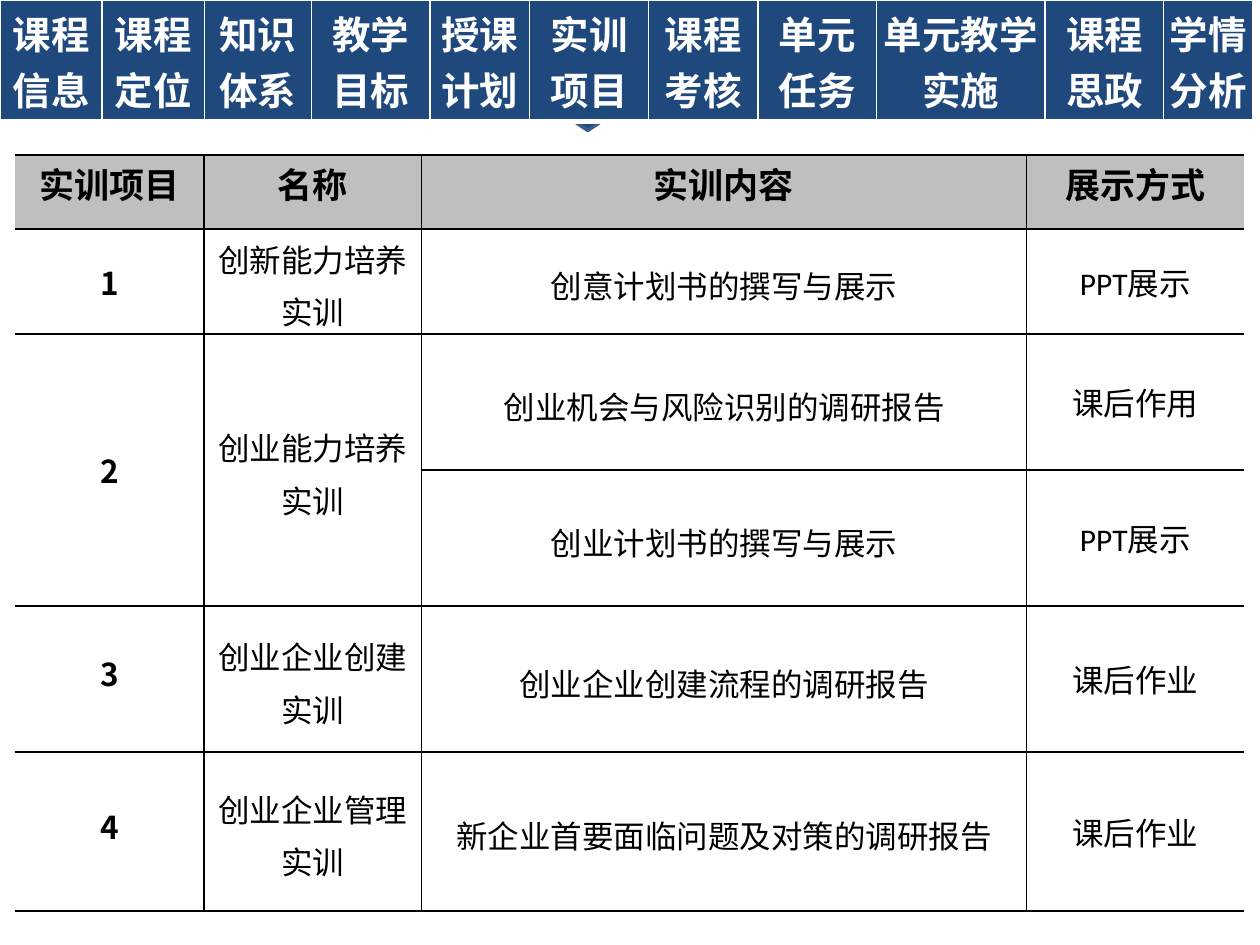
import pptx
import pptx.util
import pptx.dml.color
import pptx.enum.shapes
import pptx.enum.text
import pptx.oxml.ns
from lxml import etree
from dataclasses import dataclass

Cm, Pt = pptx.util.Cm, pptx.util.Pt


@dataclass(frozen=True)
class Theme:
    navy: str = "1F497D"
    marker_line: str = "3A5F8C"
    header_gray: str = "BFBFBF"
    black: str = "000000"
    white: str = "FFFFFF"
    nav_font: str = "Times New Roman"
    text_font: str = "Calibri"
    number_font: str = "Noto Sans CJK SC"
    nav_size: int = 22
    header_size: int = 20
    body_size: int = 18


THEME = Theme()

# Tab text (one item per paragraph) and tab width in cm
TABS = [
    (["课程", "信息"], 2.06), (["课程", "定位"], 2.06), (["知识", "体系"], 2.16),
    (["教学", "目标"], 2.39), (["授课", "计划"], 2.01), (["实训", "项目"], 2.39),
    (["课程", "考核"], 2.21), (["单元", "任务"], 2.39), (["单元教学", "实施"], 3.4),
    (["课程思政"], 2.39), (["学情分析"], 1.8),
]
HEADERS = ["实训项目", "名称", "实训内容", "展示方式"]
# Number, name paragraphs, and (content, presentation, row height in cm) per row
PROJECTS = [
    ("1", ["创新能力培养", "实训"], [("创意计划书的撰写与展示", "PPT展示", 2.08)]),
    ("2", ["创业能力培养", "实训"], [("创业机会与风险识别的调研报告", "课后作用", 2.74),
                               ("创业计划书的撰写与展示", "PPT展示", 2.74)]),
    ("3", ["创业企业创建", "实训"], [("创业企业创建流程的调研报告", "课后作业", 2.95)]),
    ("4", ["创业企业管理", "实训"], [("新企业首要面临问题及对策的调研报告", "课后作业", 3.2)]),
]
COLUMN_WIDTHS = [3.81, 4.39, 12.19, 4.39]
HEADER_HEIGHT = 1.5
TIGHT = Pt(19)
LOOSE = 1.15


def rgb(value):
    return pptx.dml.color.RGBColor.from_string(value)


def add_plain_table(slide, left, top, widths, heights):
    frame = slide.shapes.add_table(len(heights), len(widths), Cm(left), Cm(top),
                                   Cm(sum(widths)), Cm(sum(heights)))
    table = frame.table
    table.first_row = table.horz_banding = False
    for column, width in zip(table.columns, widths):
        column.width = Cm(width)
    for row, height in zip(table.rows, heights):
        row.height = Cm(height)
    return table


def set_borders(cell, color, **widths):
    """Draw the sides L, R, T and B in points; a width of 0 hides a side."""
    properties = cell._tc.get_or_add_tcPr()
    qn = pptx.oxml.ns.qn
    for side in "LRTB":
        line = etree.SubElement(properties, qn("a:ln" + side), w=str(int(Pt(widths[side]))))
        if widths[side]:
            fill = etree.SubElement(line, qn("a:solidFill"))
            etree.SubElement(fill, qn("a:srgbClr"), val=color)
        else:
            etree.SubElement(line, qn("a:noFill"))


def set_fill(cell, color):
    if color:
        cell.fill.solid()
        cell.fill.fore_color.rgb = rgb(color)
    else:
        cell.fill.background()


def write_cell(cell, lines, font, size, color, bold=False, spacing=None):
    cell.text = "\n".join(lines)
    for paragraph in cell.text_frame.paragraphs:
        paragraph.alignment = pptx.enum.text.PP_ALIGN.CENTER
        if spacing:
            paragraph.line_spacing = spacing
        paragraph.font.name = font
        paragraph.font.size = Pt(size)
        paragraph.font.bold = bold
        paragraph.font.color.rgb = rgb(color)


def add_project_table(slide):
    heights = [HEADER_HEIGHT] + [row[2] for project in PROJECTS for row in project[2]]
    table = add_plain_table(slide, 0.3, 3.12, COLUMN_WIDTHS, heights)
    last_row, last_column = len(heights) - 1, len(COLUMN_WIDTHS) - 1
    for r in range(len(heights)):
        for c in range(len(COLUMN_WIDTHS)):
            cell = table.cell(r, c)
            set_borders(cell, THEME.black,
                        L=1 if c else 0, R=1 if c < last_column else 0,
                        T=1.5 if r < 2 else 1, B=1.5 if r in (0, last_row) else 1)
            set_fill(cell, None if r else THEME.header_gray)
            cell.vertical_anchor = pptx.enum.text.MSO_ANCHOR.MIDDLE
            cell.margin_left = cell.margin_right = Cm(0.05)
            cell.margin_top = cell.margin_bottom = 0

    for c, header in enumerate(HEADERS):
        write_cell(table.cell(0, c), [header], THEME.text_font, THEME.header_size,
                   THEME.black, bold=True, spacing=TIGHT)

    body = (THEME.text_font, THEME.body_size, THEME.black)
    r = 1
    for number, name, tasks in PROJECTS:
        if len(tasks) > 1:
            for c in (0, 1):
                table.cell(r, c).merge(table.cell(r + len(tasks) - 1, c))
        write_cell(table.cell(r, 0), [number], THEME.number_font, THEME.body_size,
                   THEME.black, bold=True, spacing=TIGHT if number in "34" else None)
        write_cell(table.cell(r, 1), name, *body, spacing=LOOSE)
        for content, presentation, _ in tasks:
            write_cell(table.cell(r, 2), [content], *body, spacing=LOOSE)
            write_cell(table.cell(r, 3), [presentation], *body)
            r += 1


def add_current_tab_marker(slide):
    marker = slide.shapes.add_shape(pptx.enum.shapes.MSO_SHAPE.FLOWCHART_MERGE,
                                    Cm(11.1), Cm(2.13), Cm(1.5), Cm(0.5))
    marker.shadow.inherit = False
    marker.fill.solid()
    marker.fill.fore_color.rgb = rgb(THEME.navy)
    marker.line.color.rgb = rgb(THEME.marker_line)
    marker.line.width = Pt(2)


def add_navigation(slide):
    table = add_plain_table(slide, 0, 0, [width for _, width in TABS], [1.27])
    for c, (lines, _) in enumerate(TABS):
        cell = table.cell(0, c)
        set_borders(cell, THEME.white, L=1, R=1, T=1, B=3)
        set_fill(cell, THEME.navy)
        cell.margin_left = cell.margin_right = Cm(0.1)
        cell.margin_top = cell.margin_bottom = Cm(0.1)
        write_cell(cell, lines, THEME.nav_font, THEME.nav_size, THEME.white, bold=True)


def main():
    deck = pptx.Presentation()
    deck.slide_width, deck.slide_height = Cm(25.4), Cm(19.05)
    page = deck.slides.add_slide(deck.slide_layouts[6])
    add_project_table(page)
    add_current_tab_marker(page)
    add_navigation(page)
    deck.save("out.pptx")


if __name__ == "__main__":
    main()
